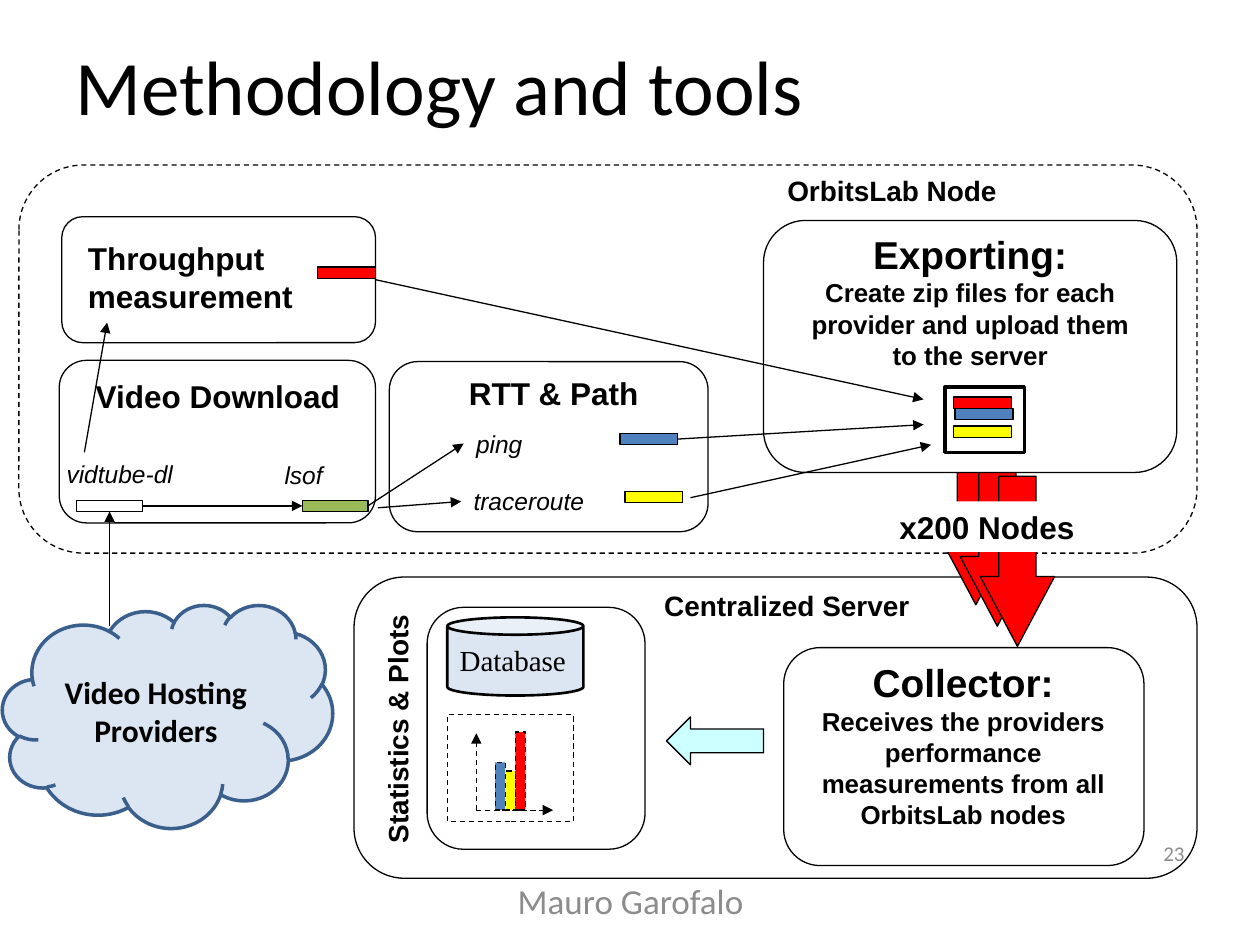
from lxml.etree import SubElement
from pptx import Presentation
from pptx.dml.color import RGBColor
from pptx.enum.dml import MSO_LINE
from pptx.enum.shapes import MSO_CONNECTOR, MSO_SHAPE
from pptx.enum.text import MSO_ANCHOR, PP_ALIGN
from pptx.oxml.ns import qn
from pptx.util import Inches, Pt

COLORS = {"black": "000000", "white": "FFFFFF", "gray": "8C8C8C", "red": "FF0000",
          "blue": "4F81BD", "yellow": "FFFF00", "green": "9BBB59", "pale": "DCE6F2",
          "aqua": "CCFFFF", "navy": "3A5F8C"}
LEFT, CENTER, RIGHT = PP_ALIGN.LEFT, PP_ALIGN.CENTER, PP_ALIGN.RIGHT
ROUND, RECT = MSO_SHAPE.ROUNDED_RECTANGLE, MSO_SHAPE.RECTANGLE

# left, top, width, height, fill
SERVER = (2.81, 4.58, 6.69, 2.39, None)
NODE = (0.15, 1.31, 9.35, 3.08, None)
PANELS = [
    (6.06, 1.75, 3.28, 2, "white"),        # exporting
    (0.49, 1.72, 2.49, 1, None),           # throughput
    (0.47, 2.86, 2.51, 1.29, None),        # video download
    (3.09, 2.87, 2.53, 1.35, None),        # RTT and path
    (3.39, 4.82, 1.73, 1.92, None),        # statistics
    (6.22, 5.14, 2.86, 1.73, None),        # collector
]
UPLOAD_ARROWS = [(7.45, 3.45), (7.62, 3.62), (7.78, 3.78)]

# name: left, top, width, fill
BARS = {
    "download": (0.61, 3.97, 0.52, "white"),
    "lsof": (2.4, 3.97, 0.52, "green"),
    "throughput": (2.52, 2.12, 0.46, "red"),
    "ping": (4.92, 3.44, 0.46, "blue"),
    "traceroute": (4.96, 3.9, 0.46, "yellow"),
    "zip throughput": (7.57, 3.15, 0.46, "red"),
    "zip ping": (7.58, 3.24, 0.46, "blue"),
    "zip traceroute": (7.57, 3.38, 0.46, "yellow"),
}
BAR_H = 0.09

# start, end, bar and side joined at start, bar and side joined at end
FLOWS = [
    ((0.87, 4.97), (0.87, 4.06), None, ("download", 2)),
    ((1.13, 4.01), (2.4, 4.01), ("download", 3), ("lsof", 1)),
    ((2.92, 4.01), (3.68, 3.52), ("lsof", 3), None),
    ((3, 4.03), (3.66, 3.98), None, None),
    ((0.67, 3.59), (0.85, 2.56), None, None),
    ((2.98, 2.22), (7.33, 3.17), None, None),
    ((5.38, 3.48), (7.33, 3.37), ("ping", 3), None),
    ((5.48, 3.95), (7.39, 3.53), None, None),
]
PLOT_BARS = [("blue", 0.38), ("yellow", 0.31), ("red", 0.62)]
PLOT_X, PLOT_Y, PLOT_BAR_W = 3.78, 6.43, 0.08

BOLD, ITALIC = {"bold": True}, {"italic": True}
# left, top, width, height, alignment, wrap, [(text, size)], style
LABELS = [
    (0.61, 2.94, 2.24, 0.4, CENTER, True, [("Video Download", 18)], BOLD),
    (3.33, 2.92, 2.13, 0.4, CENTER, True, [("RTT & Path", 18)], BOLD),
    (0.6, 1.85, 2.06, 0.71, LEFT, True, [("Throughput measurement", 18)], BOLD),
    (6.21, 5.18, 2.87, 1.47, CENTER, True,
     [("Collector:", 22.2),
      ("Receives the providers performance measurements from all OrbitsLab nodes", 14.8)], BOLD),
    (6.22, 1.78, 2.96, 1.22, CENTER, True,
     [("Exporting:", 22.2),
      ("Create zip files for each provider and upload them to the server", 14.8)], BOLD),
    (5.98, 1.33, 2.2, 0.37, CENTER, False, [("OrbitsLab Node", 16)], BOLD),
    (5.16, 4.62, 2.17, 0.37, CENTER, False, [("Centralized Server", 16)], BOLD),
    (2.16, 3.6, 0.51, 0.34, LEFT, False, [("lsof", 14)], ITALIC),
    (0.43, 3.59, 1.4, 0.34, LEFT, False, [("vidtube-dl", 14)], ITALIC),
    (3.68, 3.36, 0.57, 0.34, LEFT, False, [("ping", 14)], ITALIC),
    (3.66, 3.81, 1.08, 0.34, LEFT, False, [("traceroute", 14)], ITALIC),
]

prs = Presentation()
prs.slide_width, prs.slide_height = Inches(10), Inches(7.5)
s = prs.slides.add_slide(prs.slide_layouts[6])


def rgb(name):
    return RGBColor.from_string(COLORS[name])


def add_shape(kind, x, y, w, h, fill=None, line="black", width=0.75, dash=False, adj=()):
    sp = s.shapes.add_shape(kind, Inches(x), Inches(y), Inches(w), Inches(h))
    sp.shadow.inherit = False
    if fill:
        sp.fill.solid()
        sp.fill.fore_color.rgb = rgb(fill)
    else:
        sp.fill.background()
    sp.line.color.rgb = rgb(line)
    sp.line.width = Pt(width)
    if dash:
        sp.line.dash_style = MSO_LINE.DASH
    for i, value in enumerate(adj):
        sp.adjustments[i] = value
    return sp


def add_arrow(start, end, dash=False):
    cn = s.shapes.add_connector(MSO_CONNECTOR.STRAIGHT, *map(Inches, start + end))
    cn.line.color.rgb = rgb("black")
    cn.line.width = Pt(0.75)
    if dash:
        cn.line.dash_style = MSO_LINE.DASH
    SubElement(cn.line._get_or_add_ln(), qn("a:tailEnd"), type="triangle")
    SubElement(cn._element.spPr, qn("a:effectLst"))
    return cn


def write(sp, paragraphs, align=LEFT, wrap=True, anchor=MSO_ANCHOR.TOP,
          font="Arial", color="black", bold=False, italic=False):
    tf = sp.text_frame
    tf.word_wrap = wrap
    tf.vertical_anchor = anchor
    for i, (text, size) in enumerate(paragraphs):
        p = tf.add_paragraph() if i else tf.paragraphs[0]
        p.alignment = align
        r = p.add_run()
        r.text = text
        r.font.name, r.font.size = font, Pt(size)
        r.font.bold, r.font.italic = bold, italic
        r.font.color.rgb = rgb(color)


def add_text(x, y, w, h, paragraphs, **style):
    tb = s.shapes.add_textbox(Inches(x), Inches(y), Inches(w), Inches(h))
    write(tb, paragraphs, **style)
    return tb


# Frames, upload arrows and panels
add_shape(ROUND, *SERVER)
add_shape(ROUND, *NODE, dash=True)
for x, y in UPLOAD_ARROWS:
    add_shape(MSO_SHAPE.DOWN_ARROW, x, y, 0.59, 1.35, "red", adj=(0.5, 0.938))
for panel in PANELS:
    add_shape(ROUND, *panel)

# Database and plot
add_shape(MSO_SHAPE.CAN, 3.55, 4.9, 1.08, 0.62, "pale", width=1.5, adj=(0.222,))
add_text(3.55, 5.05, 1.06, 0.38, [("Database", 16.6)], wrap=False, font="Times New Roman")
add_shape(RECT, 3.55, 5.67, 1, 0.85, "white", dash=True)
for end in [(PLOT_X, 5.82), (4.39, PLOT_Y)]:
    add_arrow((PLOT_X, PLOT_Y), end, dash=True)
for i, (color, h) in enumerate(PLOT_BARS):
    add_shape(RECT, PLOT_X + 0.15 + i * PLOT_BAR_W, PLOT_Y - h, PLOT_BAR_W, h, color, dash=True)
add_shape(MSO_SHAPE.LEFT_ARROW, 5.29, 5.69, 0.77, 0.38, "aqua")

# Video source, data bars and flows
cloud = add_shape(MSO_SHAPE.CLOUD, 0.02, 4.8, 2.62, 1.77, "pale", "navy", 2)
write(cloud, [("Video Hosting Providers", 18)], align=CENTER, anchor=MSO_ANCHOR.MIDDLE,
      font="Calibri", bold=True)
add_shape(RECT, 7.5, 3.07, 0.63, 0.52, "white", width=2)
bars = {name: add_shape(RECT, x, y, w, BAR_H, fill) for name, (x, y, w, fill) in BARS.items()}
for start, end, source, target in FLOWS:
    cn = add_arrow(start, end)
    if source:
        cn.begin_connect(bars[source[0]], source[1])
    if target:
        cn.end_connect(bars[target[0]], target[1])

# Labels
for x, y, w, h, align, wrap, paragraphs, style in LABELS:
    add_text(x, y, w, h, paragraphs, align=align, wrap=wrap, **style)
stats = add_text(2.15, 5.6, 2.04, 0.34, [("Statistics & Plots", 16)], wrap=False, bold=True)
stats.rotation = 270
stats.text_frame.paragraphs[0].line_spacing = 0.9
nodes = add_text(7.04, 3.98, 1.6, 0.4, [("x200 Nodes", 18)], wrap=False, bold=True)
nodes.fill.solid()
nodes.fill.fore_color.rgb = rgb("white")

# Title and footer
middle = {"anchor": MSO_ANCHOR.MIDDLE, "font": "Calibri"}
add_text(0.5, 0.05, 9, 1.25, [("Methodology and tools", 44)], **middle)
add_text(3.42, 6.95, 3.17, 0.4, [("Mauro Garofalo", 20)], align=CENTER, color="gray", **middle)
add_text(7.17, 6.57, 2.33, 0.4, [("23", 12)], align=RIGHT, color="gray", **middle)

prs.save("out.pptx")
